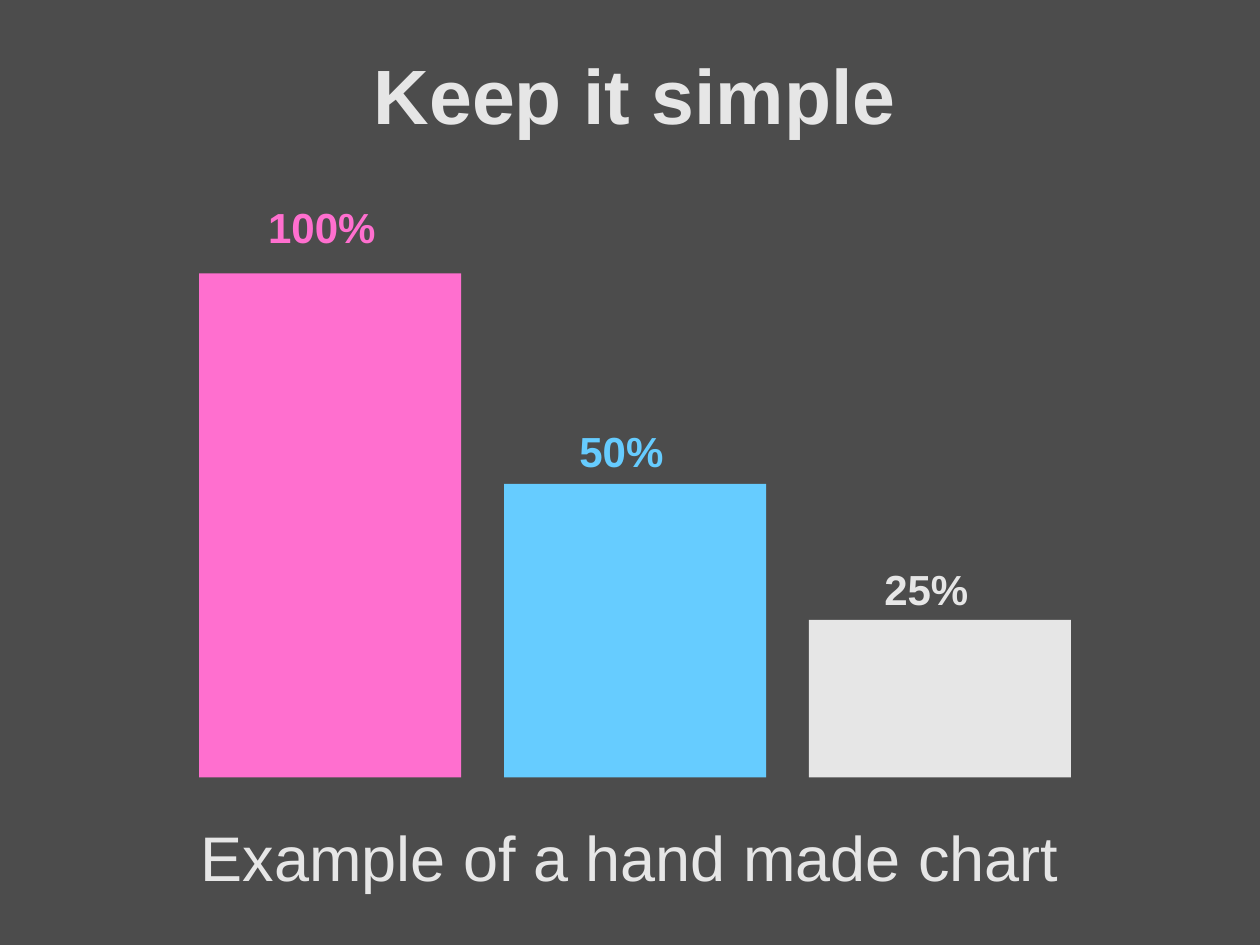
from pptx import Presentation
from pptx.dml.color import RGBColor
from pptx.enum.shapes import MSO_SHAPE as Shape
from pptx.enum.text import MSO_ANCHOR as Anchor, MSO_AUTO_SIZE as AutoSize, PP_ALIGN as Align
from pptx.util import Inches, Pt

PINK, BLUE, LIGHT, DARK = "FF6FCF", "66CCFF", "E6E6E6", "4C4C4C"


def color(hex_code):
    return RGBColor.from_string(hex_code)


def add_text(text, box, size, hex_code, bold, align, frame_format):
    frame = slide.shapes.add_textbox(*map(Inches, box)).text_frame
    for name, value in frame_format.items():
        setattr(frame, name, value)
    line = frame.paragraphs[0]
    line.alignment = align
    words = line.add_run()
    words.text = text
    font_format = {"name": "Arial", "size": Pt(size), "bold": bold}
    for name, value in font_format.items():
        setattr(words.font, name, value)
    words.font.color.rgb = color(hex_code)
    return line


deck = Presentation()
deck.slide_width, deck.slide_height = Inches(10), Inches(7.5)
slide = deck.slides.add_slide(deck.slide_layouts[6])
slide.background.fill.solid()
slide.background.fill.fore_color.rgb = color(DARK)

# Caption below the chart
add_text("Example of a hand made chart", (0.5, 6.17, 9, 1.25), 36, LIGHT, False,
         Align.CENTER, {"word_wrap": True, "vertical_anchor": Anchor.MIDDLE})

# Bars on a common baseline, each with its percentage above
baseline, first_left, bar_width, step = 6.17, 1.58, 2.08, 2.42
bars = [  # label, colour, bar height, label left, label top, label width
    ("100%", PINK, 4, 2.03, 1.55, 1.05),
    ("50%", BLUE, 2.33, 4.5, 3.33, 0.87),
    ("25%", LIGHT, 1.25, 6.92, 4.42, 0.87),
]
for i, (percent, hue, height, left, top, width) in enumerate(bars):
    bar = slide.shapes.add_shape(
        Shape.RECTANGLE, Inches(first_left + i * step), Inches(baseline - height),
        Inches(bar_width), Inches(height))
    bar.shadow.inherit = False
    bar.fill.solid()
    bar.fill.fore_color.rgb = color(hue)
    bar.line.fill.background()
    add_text(percent, (left, top, width, 0.5), 24, hue, True, Align.LEFT,
             {"word_wrap": False, "auto_size": AutoSize.SHAPE_TO_FIT_TEXT})

# Heading
heading = add_text("Keep it simple", (first_left, 0.33, 6.92, 0.83), 44, LIGHT, True,
                   Align.CENTER,
                   {"word_wrap": True, "auto_size": AutoSize.SHAPE_TO_FIT_TEXT})
heading.space_before = Pt(4)

deck.save("out.pptx")
